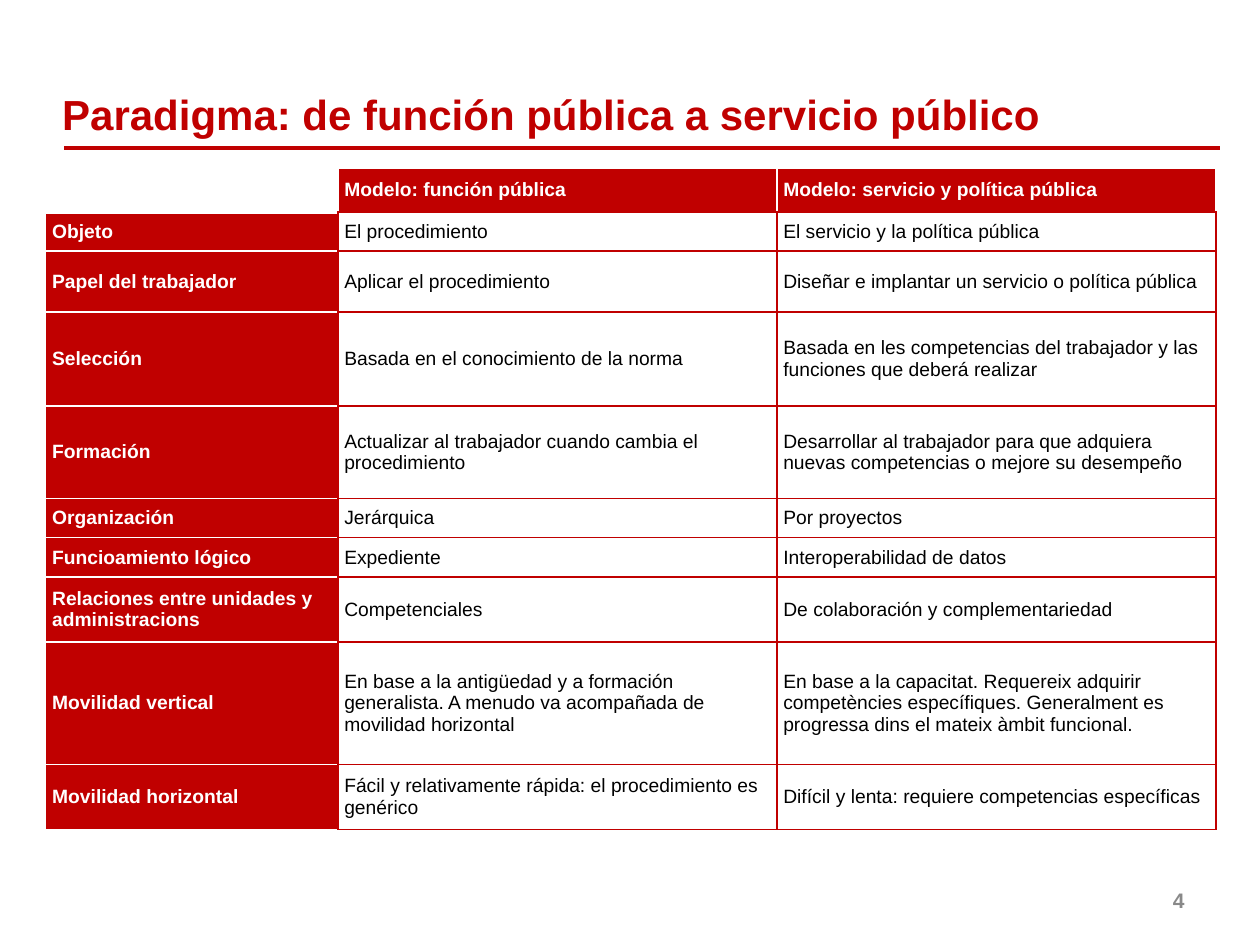
import pptx
import pptx.util
import pptx.dml.color
import pptx.enum.shapes
import pptx.enum.text
import pptx.oxml
from lxml import etree

Cm, Pt = pptx.util.Cm, pptx.util.Pt
MIDDLE = pptx.enum.text.MSO_ANCHOR.MIDDLE
RED, WHITE, BLACK, GREY = "C00000", "FFFFFF", "000000", "898989"


def color(hex_value):
    return pptx.dml.color.RGBColor.from_string(hex_value)


def style(paragraph, size, hex_value, bold):
    paragraph.font.name = "Arial"
    paragraph.font.size = Pt(size)
    paragraph.font.bold = bold
    paragraph.font.color.rgb = color(hex_value)


presentation = pptx.Presentation()
presentation.slide_width, presentation.slide_height = Cm(25.4), Cm(19.05)
slide = presentation.slides.add_slide(presentation.slide_layouts[5])

# Title and the rule under it
title = slide.shapes.title
title.left, title.top, title.width, title.height = Cm(1), Cm(1.6), Cm(24.4), Cm(1.4)
title.text_frame.text = "Paradigma: de función pública a servicio público"
title.text_frame.vertical_anchor = MIDDLE
title.text_frame.paragraphs[0].alignment = pptx.enum.text.PP_ALIGN.LEFT
style(title.text_frame.paragraphs[0], 24, RED, True)

title_rule = slide.shapes.add_connector(
    pptx.enum.shapes.MSO_CONNECTOR.STRAIGHT, Cm(1.3), Cm(2.98), Cm(24.6), Cm(2.98))
title_rule.line.color.rgb = color(RED)
title_rule.line.width = Pt(2.25)
etree.SubElement(title_rule._element.spPr, pptx.oxml.ns.qn("a:effectLst"))

# Comparison table: row height in cm, then the three cells
comparison = [
    (0.87, "", "Modelo: función pública", "Modelo: servicio y política pública"),
    (0.79, "Objeto", "El procedimiento", "El servicio y la política pública"),
    (1.23, "Papel del trabajador", "Aplicar el procedimiento",
     "Diseñar e implantar un servicio o política pública"),
    (1.89, "Selección", "Basada en el conocimiento de la norma",
     "Basada en les competencias del trabajador y las funciones que deberá realizar"),
    (1.87, "Formación", "Actualizar al trabajador cuando cambia el procedimiento",
     "Desarrollar al trabajador para que adquiera nuevas competencias o mejore su desempeño"),
    (0.79, "Organización", "Jerárquica", "Por proyectos"),
    (0.79, "Funcioamiento lógico", "Expediente", "Interoperabilidad de datos"),
    (1.31, "Relaciones entre unidades y administracions", "Competenciales",
     "De colaboración y complementariedad"),
    (2.47, "Movilidad vertical",
     "En base a la antigüedad y a formación generalista. "
     "A menudo va acompañada de movilidad horizontal",
     "En base a la capacitat. Requereix adquirir competències específiques. "
     "Generalment es progressa dins el mateix àmbit funcional."),
    (1.31, "Movilidad horizontal", "Fácil y relativamente rápida: el procedimiento es genérico",
     "Difícil y lenta: requiere competencias específicas"),
]
column_widths = [5.89, 8.85, 8.85]
table = slide.shapes.add_table(
    len(comparison), len(column_widths), Cm(0.92), Cm(3.4),
    Cm(sum(column_widths)), Cm(sum(row[0] for row in comparison))).table
for column, width in zip(table.columns, column_widths):
    column.width = Cm(width)

for r, (height, *texts) in enumerate(comparison):
    table.rows[r].height = Cm(height)
    for c, text in enumerate(texts):
        cell = table.cell(r, c)
        corner = r == 0 and c == 0
        heading = (r == 0 or c == 0) and not corner
        cell.text = text
        cell.vertical_anchor = MIDDLE
        cell.margin_left = cell.margin_right = Cm(0.13)
        cell.margin_top = cell.margin_bottom = 0
        style(cell.text_frame.paragraphs[0], 11, WHITE if heading else BLACK, heading)

        # Borders come before the fill in the cell properties
        edges = dict.fromkeys(["L", "R", "T", "B"], WHITE if heading or corner else RED)
        if heading:
            edges["B" if r == 0 else "R"] = RED
        for side, edge_color in edges.items():
            points = 3 if corner and side == "B" else 1
            cell._tc.get_or_add_tcPr().append(pptx.oxml.parse_xml(
                f'<a:ln{side} {pptx.oxml.ns.nsdecls("a")} w="{Pt(points)}"><a:solidFill>'
                f'<a:srgbClr val="{edge_color}"/></a:solidFill></a:ln{side}>'))
        cell.fill.solid()
        cell.fill.fore_color.rgb = color(RED if heading else WHITE)

# Page number
page_number = slide.shapes.add_textbox(Cm(18.2), Cm(17.65), Cm(5.93), Cm(1.01)).text_frame
page_number.word_wrap = True
page_number.vertical_anchor = MIDDLE
page_number.text = "4"
page_number.paragraphs[0].alignment = pptx.enum.text.PP_ALIGN.RIGHT
style(page_number.paragraphs[0], 12, GREY, True)

presentation.save("out.pptx")
